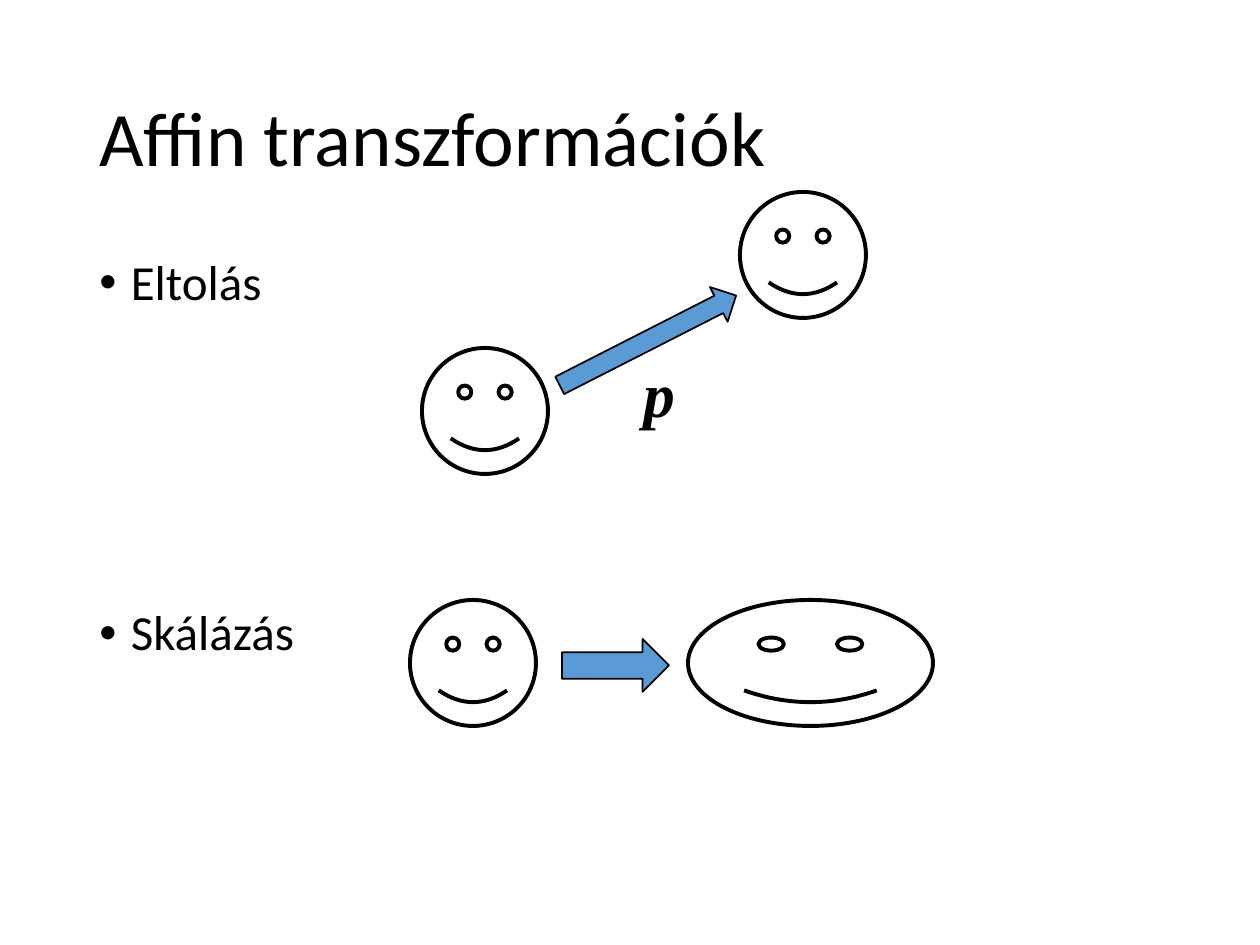
import pptx
import pptx.dml.color
import pptx.enum.shapes
import pptx.enum.text
import pptx.oxml.ns
import pptx.util
from lxml import etree

EMU_PER_PX = 914400 / 126
BLACK = pptx.dml.color.RGBColor(0x00, 0x00, 0x00)
BLUE = pptx.dml.color.RGBColor(0x5B, 0x9B, 0xD5)
SHAPE = pptx.enum.shapes.MSO_SHAPE
ANCHOR = pptx.enum.text.MSO_ANCHOR
FACE = 126  # face height, and width when not stretched


def px(length):
    return pptx.util.Emu(round(length * EMU_PER_PX))


def add_text(shapes, box, lines, size, font="Calibri", anchor=ANCHOR.TOP, wrap=True):
    frame = shapes.add_textbox(*map(px, box)).text_frame
    frame.word_wrap = wrap
    frame.vertical_anchor = anchor
    frame.text = "\n".join(lines)
    for paragraph in frame.paragraphs:
        paragraph.font.name = font
        paragraph.font.size = pptx.util.Pt(size)
        paragraph.font.color.rgb = BLACK
    return frame.paragraphs


def add_bullet(paragraph, space_before):
    paragraph.line_spacing = 0.9
    paragraph.space_before = pptx.util.Pt(space_before)
    properties = paragraph._p.get_or_add_pPr()
    indent = pptx.util.Inches(0.25)
    properties.set("marL", str(indent))
    properties.set("indent", str(-indent))
    # The bullet belongs right after the spacing, ahead of run defaults
    qn = pptx.oxml.ns.qn
    font = etree.Element(qn("a:buFont"), typeface="Arial")
    bullet = etree.Element(qn("a:buChar"), char="•")
    properties.find(qn("a:spcBef")).addnext(font)
    font.addnext(bullet)


def add_outlined(shapes, kind, box, line_width):
    shape = shapes.add_shape(kind, *map(px, box))
    shape.shadow.inherit = False
    shape.line.color.rgb = BLACK
    shape.line.width = pptx.util.Pt(line_width)
    return shape


def add_face(shapes, left, top, width=FACE):
    face = add_outlined(shapes, SHAPE.SMILEY_FACE, (left, top, width, FACE), 2.25)
    face.fill.background()
    face.adjustments[0] = 0.047


def add_arrow(shapes, box, rotation=0):
    arrow = add_outlined(shapes, SHAPE.RIGHT_ARROW, box, 1)
    arrow.fill.solid()
    arrow.fill.fore_color.rgb = BLUE
    arrow.rotation = rotation


def main():
    deck = pptx.Presentation()
    deck.slide_width, deck.slide_height = px(1260), px(945)
    shapes = deck.slides.add_slide(deck.slide_layouts[6]).shapes

    # Title and the two kinds of transformation
    title, = add_text(shapes, (87, 50, 1086, 183), ["Affin transzformációk"], 44,
                      anchor=ANCHOR.MIDDLE)
    title.line_spacing = 0.9
    translation, scaling = add_text(shapes, (87, 252, 1086, 600),
                                    ["Eltolás", "Skálázás"], 28)
    add_bullet(translation, 10)
    add_bullet(scaling, 170)

    # Translation: the face moves by the vector p
    moved = shapes.add_group_shape().shapes
    add_face(moved, 422, 348)
    add_face(moved, 740, 192)
    add_arrow(moved, (549, 321, 198, 39), rotation=333)
    vector, = add_text(moved, (631, 348, 57, 89), ["p"], 36, "Times New Roman", wrap=False)
    vector.font.bold = vector.font.italic = True

    # Scaling: the face is stretched sideways
    stretched = shapes.add_group_shape().shapes
    add_face(stretched, 410, 600)
    add_face(stretched, 688, 600, width=245)
    add_arrow(stretched, (562, 639, 107, 53))

    deck.save("out.pptx")


if __name__ == "__main__":
    main()
